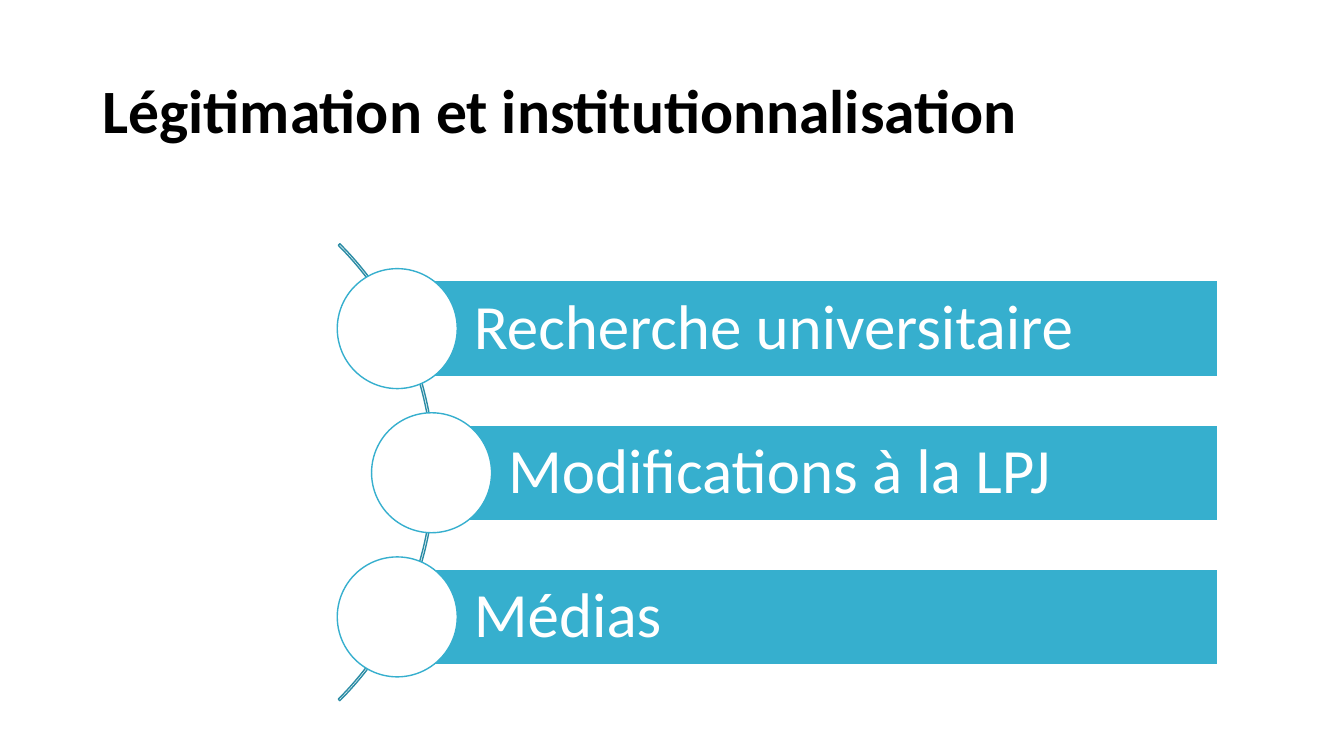
from pptx import Presentation
from pptx import util as u
from pptx.dml.color import RGBColor
from pptx.enum import shapes, text

KIND = shapes.MSO_SHAPE


def tint(code):
    """Turn a hex string into a colour."""
    return RGBColor.from_string(code)


def write(shape, words, size=45, color="FFFFFF", bold=False, pad=(0.1, 0.05, 0.1, 0.05)):
    """Put one formatted line of text in a shape."""
    frame = shape.text_frame
    frame.word_wrap = True
    frame.vertical_anchor = text.MSO_ANCHOR.MIDDLE
    sides = [u.Inches(p) for p in pad]
    frame.margin_left, frame.margin_top, frame.margin_right, frame.margin_bottom = sides
    para = frame.paragraphs[0]
    para.alignment = text.PP_ALIGN.LEFT
    para.line_spacing = 0.9
    run = para.add_run()
    run.text = words
    font = run.font
    font.name, font.size, font.bold = "Calibri", u.Pt(size), bold
    font.color.rgb = tint(color)


class Deck:
    """Hold the style and the current slide."""

    blue, dark, white, black = "36AFCE", "2B8CA5", "FFFFFF", "000000"

    def __init__(self):
        """Open a wide deck with one blank slide."""
        self.file = Presentation()
        self.file.slide_width = u.Inches(13.33)
        self.file.slide_height = u.Inches(7.5)
        self.slide = self.file.slides.add_slide(self.file.slide_layouts[6])

    def title(self, words, *box):
        """Add the bold heading."""
        area = self.slide.shapes.add_textbox(*map(u.Inches, box))
        write(area, words, size=44, color=self.black, bold=True)

    def shape(self, kind, box, line, fill=None):
        """Add a flat preset shape."""
        item = self.slide.shapes.add_shape(kind, *map(u.Inches, box))
        item.shadow.inherit = False
        item.line.color.rgb = tint(line)
        item.line.width = u.Pt(1)
        if fill:
            item.fill.solid()
            item.fill.fore_color.rgb = tint(fill)
        else:
            item.fill.background()
        return item

    def arc(self, *box):
        """Add the thin curve behind the rows."""
        curve = self.shape(KIND.BLOCK_ARC, box, self.dark)
        for i, value in enumerate((189, 27, 0.0034)):
            curve.adjustments[i] = value

    def row(self, words, x, y, right=12.08, high=0.95, wide=1.19):
        """Add a bar and the circle centred on its left end."""
        box = (x, y - high / 2, right - x, high)
        bar = self.shape(KIND.RECTANGLE, box, self.white, self.blue)
        write(bar, words, pad=(0.76, 0.12, 0.12, 0.12))
        box = (x - wide / 2, y - wide / 2, wide, wide)
        self.shape(KIND.OVAL, box, self.blue, self.white)


def main():
    """Build and save the slide."""
    deck = Deck()
    deck.title("Légitimation et institutionnalisation", 0.92, 0.4, 11.5, 1.45)
    deck.arc(-2.1, 1.48, 6.41, 6.41)
    rows = ("Recherche universitaire", 3.94), ("Modifications à la LPJ", 4.28), ("Médias", 3.94)
    for i, (words, x) in enumerate(rows):
        deck.row(words, x, 3.26 + 1.43 * i)
    deck.file.save("out.pptx")


if __name__ == "__main__":
    main()
